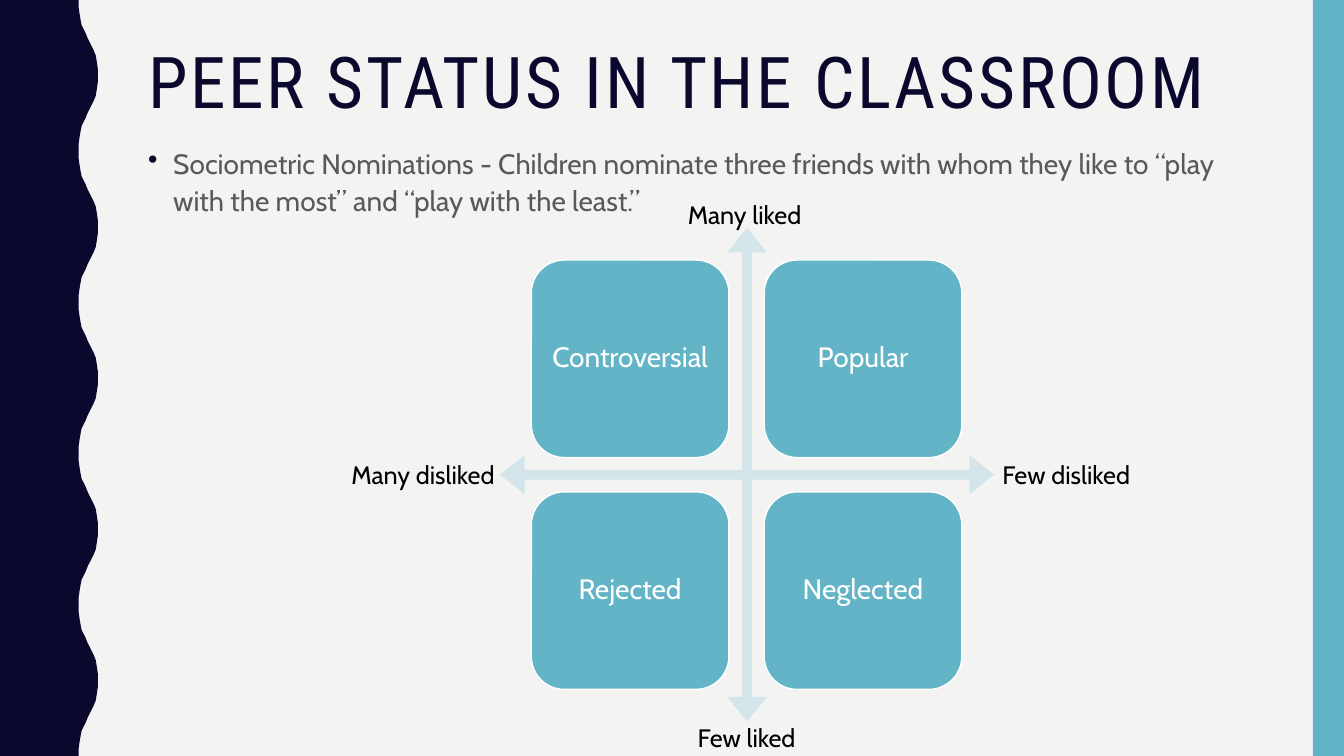
from pptx import Presentation
from pptx.dml.color import RGBColor
from pptx.enum.shapes import MSO_SHAPE as Shape
from pptx.enum.text import MSO_ANCHOR as Anchor, PP_ALIGN as Align
from pptx.oxml.xmlchemy import OxmlElement as Element
from pptx.util import Pt

PX = 9144  # 100 px to the inch
NAVY = RGBColor(0x0B, 0x08, 0x2E)
TEAL = RGBColor(0x62, 0xB4, 0xC6)
PALE_TEAL = RGBColor(0xD3, 0xE5, 0xEA)
PAPER = RGBColor(0xF3, 0xF3, 0xF2)
GREY = RGBColor(0x59, 0x59, 0x59)
BLACK = RGBColor(0, 0, 0)
WHITE = RGBColor(255, 255, 255)

deck = Presentation()
deck.slide_width, deck.slide_height = 1333 * PX, 750 * PX
page = deck.slides.add_slide(deck.slide_layouts[6])
page.background.fill.solid()
page.background.fill.fore_color.rgb = PAPER


def paint(shape, color):
    shape.shadow.inherit = False
    shape.fill.solid()
    shape.fill.fore_color.rgb = color
    shape.line.fill.background()


def write(shape, text, size, color, font="Cabin", align=Align.LEFT, spacing=1.0):
    shape.text_frame.word_wrap = True
    shape.text_frame.text = text
    para = shape.text_frame.paragraphs[0]
    para.alignment, para.line_spacing = align, spacing
    span = para.runs[0]
    span.font.name, span.font.size = font, Pt(size)
    span.font.color.rgb = color
    return para


# Wavy left edge: each 150 px wave is a half wave and its mirror
half_wave = [(78, 0), (78, 7), (79, 14), (80, 20), (81, 25), (83, 29), (85, 33), (87, 38),
             (89, 42), (91, 46), (93, 50), (95, 55), (96, 61), (97, 68), (97, 75)]
wave = half_wave + [(x, 150 - y) for x, y in half_wave[-2::-1]]
edge = [(x, top + y) for top in range(0, 750, 150) for x, y in wave]
outline = page.shapes.build_freeform(0, 0, scale=PX)
outline.add_line_segments(edge + [(0, 750)], close=True)
paint(outline.convert_to_shape(), NAVY)

# Right band
band = page.shapes.add_shape(Shape.RECTANGLE, 1302 * PX, 0, 31 * PX, 750 * PX)
paint(band, TEAL)

# Title
title = page.shapes.add_textbox(137 * PX, 42 * PX, 1113 * PX, 95 * PX)
para = write(title, "PEER STATUS IN THE CLASSROOM", 51, NAVY, "Roboto Condensed", spacing=0.9)
para.runs[0].font._element.set("spc", "200")

# Bulleted text
body = page.shapes.add_textbox(137 * PX, 137 * PX, 1113 * PX, 393 * PX)
para = write(body, "Sociometric Nominations - Children nominate three friends with whom they like to "
             "“play with the most” and “play with the least.”", 20, GREY, spacing=1.1)
para.space_before = Pt(7)
properties = para._p.get_or_add_pPr()
properties.set("marL", str(25 * PX))
properties.set("indent", str(-25 * PX))
bullet_color = Element("a:buClr")
bullet_shade = Element("a:srgbClr")
bullet_shade.set("val", str(NAVY))
bullet_color.append(bullet_shade)
bullet = Element("a:buChar")
bullet.set("char", "•")
properties.extend([bullet_color, bullet])

# Liked and disliked axes
axes = page.shapes.add_shape(Shape.QUAD_ARROW, 496 * PX, 226 * PX, 490 * PX, 490 * PX)
for index, ratio in enumerate((0.02, 0.04, 0.05)):
    axes.adjustments[index] = ratio
paint(axes, PALE_TEAL)

# Four status tiles
statuses = ["Controversial", "Popular", "Rejected", "Neglected"]
for index, status in enumerate(statuses):
    row, column = divmod(index, 2)
    tile = page.shapes.add_shape(Shape.ROUNDED_RECTANGLE, (527 + 231 * column) * PX,
                                 (258 + 230 * row) * PX, 196 * PX, 196 * PX)
    paint(tile, TEAL)
    tile.line.color.rgb = WHITE
    tile.line.width = Pt(1)
    frame = tile.text_frame
    frame.margin_left = frame.margin_right = 10 * PX
    frame.vertical_anchor = Anchor.MIDDLE
    write(tile, status, 20, WHITE, align=Align.CENTER, spacing=0.9)

# Axis labels
labels = [("Many liked", 656, 193), ("Many disliked", 337, 451),
          ("Few disliked", 975, 451), ("Few liked", 658, 712)]
for text, left, top in labels:
    label = page.shapes.add_textbox(left * PX, top * PX, 165 * PX, 40 * PX)
    write(label, text, 18, BLACK, align=Align.CENTER)

deck.save("out.pptx")
